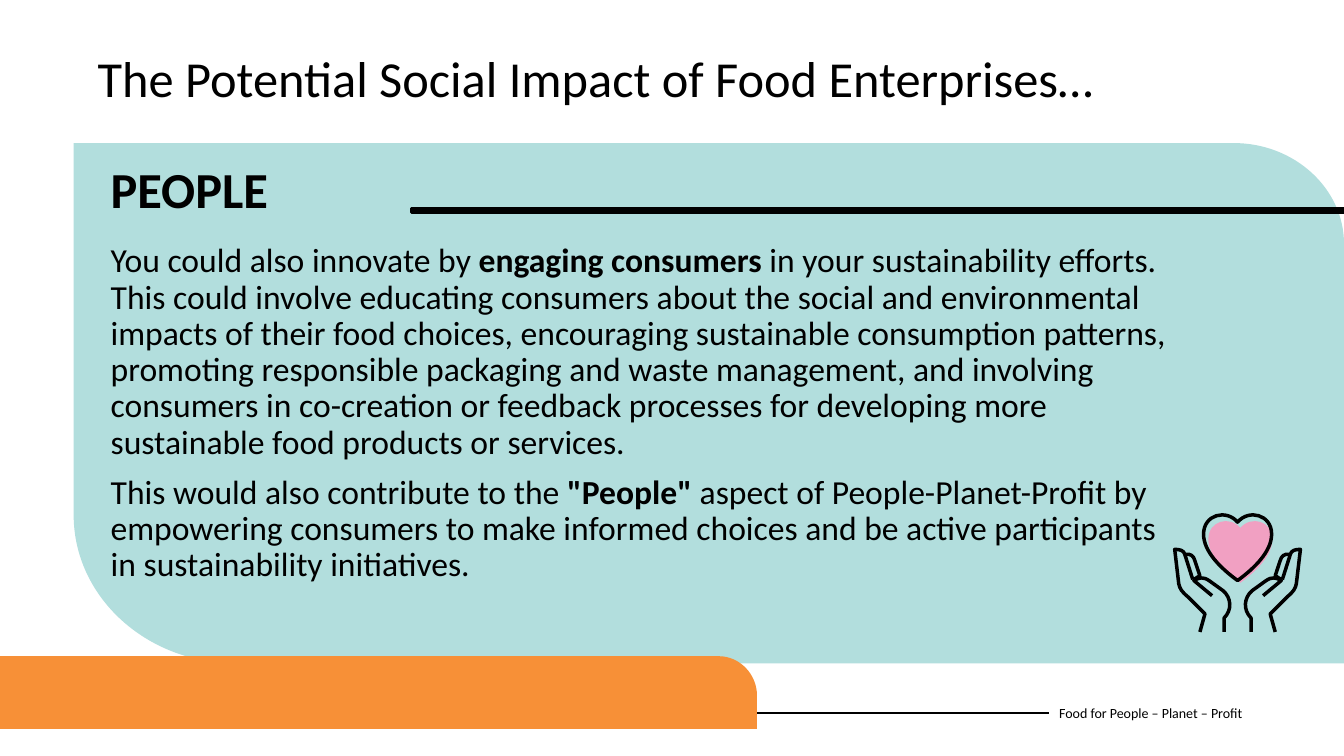
from dataclasses import dataclass

from lxml import etree
from pptx import Presentation
from pptx.dml.color import RGBColor
from pptx.enum.shapes import MSO_CONNECTOR, MSO_SHAPE
from pptx.enum.text import MSO_ANCHOR, MSO_AUTO_SIZE, PP_ALIGN
from pptx.oxml.ns import qn
from pptx.util import Pt

STRAIGHT = MSO_CONNECTOR.STRAIGHT
RECTANGLE = MSO_SHAPE.RECTANGLE
TOP, MIDDLE = MSO_ANCHOR.TOP, MSO_ANCHOR.MIDDLE
LEFT = PP_ALIGN.LEFT
NO_AUTOFIT = MSO_AUTO_SIZE.NONE

FONT = "Calibri"
COLORS = {"ink": "000000", "panel": "B2DEDD", "banner": "F79037", "heart": "F1A0C2"}
TITLE_ONLY = 5
ICON_X, ICON_Y = 884, 366  # mirror axis and top of the icon

Point = tuple[float, float]


@dataclass(frozen=True)
class Outline:
    """Each step holds one point for a straight line, three for a curve."""
    start: Point
    steps: list[tuple[Point, ...]]
    closed: bool = False

    def moved(self, dx: float, dy: float, sx: float = 1, sy: float = 1) -> "Outline":
        def place(point: Point) -> Point:
            return dx + sx * point[0], dy + sy * point[1]

        steps = [tuple(place(p) for p in step) for step in self.steps]
        return Outline(place(self.start), steps, self.closed)


@dataclass(frozen=True)
class Run:
    text: str
    bold: bool = False


@dataclass(frozen=True)
class TextStyle:
    size: float
    line_spacing: float = 1.0
    space_before: float = 0
    anchor: MSO_ANCHOR = TOP


PANEL = Outline((52.6, 102.2), [
    ((881.3, 102.2),),
    ((924.5, 102.2), (960, 134.6), (960, 174.2)),
    ((960, 473.8),),
    ((168.5, 473.8),),
    ((104.4, 473.8), (52.6, 426.2), (52.6, 367.9)),
], True)
BANNER = Outline((0, 468.7), [
    ((513.4, 468.7),),
    ((528.5, 468.7), (540.7, 481.7), (540.7, 496.8)),
    ((540.7, 520.6),),
    ((0, 520.6),),
], True)

# Icon parts, measured from the mirror axis
HEART = Outline((0, 7), [
    ((8, -2.5), (24.3, 1.5), (24.3, 15.6)),
    ((24.3, 28), (12, 40), (0, 48.7)),
    ((-12, 40), (-24.3, 28), (-24.3, 15.6)),
    ((-24.3, 1.5), (-8, -2.5), (0, 7)),
], True)
HAND = [
    Outline((9.6, 85.4), [  # wrist and thumb
        ((9.6, 75.4),),
        ((3.8, 69.6), (4.5, 61), (10.3, 56)),
        ((20.4, 48.7),),
        ((24.7, 45.8), (27.6, 46.6), (31.2, 48.7)),
        ((18.2, 59.5),),
    ]),
    Outline((26.9, 85.4), [  # outer edge and little finger
        ((23.3, 72.5),),
        ((35.5, 60.3),),
        ((39.8, 56.7), (41.3, 54.5), (42, 51)),
        ((44.9, 26.4),),
        ((41.3, 26.4), (38.4, 27.1), (37.7, 30)),
        ((32, 48),),
    ]),
    Outline((37, 30), [  # inner finger
        ((33.4, 29.3), (31.2, 31.5), (30.5, 34.4)),
        ((26.9, 45.2),),
        ((31.2, 48),),
    ]),
]

TITLE = [[Run("The Potential Social Impact of Food Enterprises…")]]
HEADING = [[Run("PEOPLE", True)]]
FOOTER = [[Run("Food for People – Planet – Profit")]]
BODY = [
    [
        Run("You could also innovate by "),
        Run("engaging consumers ", True),
        Run("in your sustainability efforts. This could involve educating consumers "
            "about the social and environmental impacts of their food choices, "
            "encouraging sustainable consumption patterns, promoting responsible "
            "packaging and waste management, and involving consumers in co-creation "
            "or feedback processes for developing more sustainable food products or "
            "services."),
    ],
    [
        Run("This would also contribute to the "),
        Run('"People" ', True),
        Run("aspect of People-Planet-Profit by empowering consumers to make informed "
            "choices and be active participants in sustainability initiatives."),
    ],
]


def color(name: str) -> RGBColor:
    return RGBColor.from_string(COLORS[name])


def paint(shape, fill: str | None, line_width: float = 0) -> None:
    shape.shadow.inherit = False
    if fill:
        shape.fill.solid()
        shape.fill.fore_color.rgb = color(fill)
    else:
        shape.fill.background()
    if line_width:
        shape.line.color.rgb = color("ink")
        shape.line.width = Pt(line_width)
    else:
        shape.line.fill.background()


def draw_outline(shapes, outline: Outline, fill: str | None, line_width: float = 0) -> None:
    builder = shapes.build_freeform(*map(Pt, outline.start))
    points = [(Pt(x), Pt(y)) for step in outline.steps for x, y in step]
    builder.add_line_segments(points, close=outline.closed)
    shape = builder.convert_to_shape()
    # Turn every three-point step into one curve
    segments = iter(list(shape._element.iter(qn("a:lnTo"))))
    for step in outline.steps:
        parts = [next(segments) for _ in step]
        if len(parts) == 3:
            curve = etree.Element(qn("a:cubicBezTo"))
            parts[0].addprevious(curve)
            for part in parts:
                curve.append(part[0])
                part.getparent().remove(part)
    paint(shape, fill, line_width)


def write(shape, box: tuple[float, float, float, float],
          paragraphs: list[list[Run]], style: TextStyle) -> None:
    shape.left, shape.top, shape.width, shape.height = map(Pt, box)
    frame = shape.text_frame
    frame.word_wrap = True
    frame.auto_size = NO_AUTOFIT
    frame.vertical_anchor = style.anchor
    for index, runs in enumerate(paragraphs):
        paragraph = frame.add_paragraph() if index else frame.paragraphs[0]
        paragraph.alignment = LEFT
        paragraph.line_spacing = style.line_spacing
        paragraph.space_before = Pt(style.space_before)
        for item in runs:
            run = paragraph.add_run()
            run.text = item.text
            run.font.name = FONT
            run.font.size = Pt(style.size)
            run.font.bold = item.bold
            run.font.color.rgb = color("ink")


def main() -> None:
    deck = Presentation()
    deck.slide_width, deck.slide_height = Pt(960), Pt(540)
    slide = deck.slides.add_slide(deck.slide_layouts[TITLE_ONLY])
    shapes = slide.shapes

    # Footer line, panel, banner and heading rule
    footer_line = shapes.add_connector(STRAIGHT, Pt(0), Pt(509), Pt(749.5), Pt(509))
    footer_line.line.color.rgb = color("ink")
    footer_line.line.width = Pt(1.5)
    etree.SubElement(footer_line._element.spPr, qn("a:effectLst"))
    draw_outline(shapes, PANEL, "panel")
    draw_outline(shapes, BANNER, "banner")
    heading_rule = shapes.add_shape(RECTANGLE, Pt(293.8), Pt(149), Pt(666.2), Pt(2.9))
    paint(heading_rule, "ink", 1.93)

    # Texts
    write(shapes.title, (62.6, 35.3, 834.5, 63.4), TITLE, TextStyle(36, 0.9, 10))
    for box, paragraphs, style in [
        ((72, 109.4, 192.2, 51.1), HEADING, TextStyle(36)),
        ((72, 170.6, 776.9, 270.7), BODY, TextStyle(24, 0.9, 10)),
        ((749.5, 494.6, 196.6, 28.8), FOOTER, TextStyle(10, anchor=MIDDLE)),
    ]:
        write(shapes.add_textbox(0, 0, 0, 0), box, paragraphs, style)

    # Heart held by two mirrored hands
    icon = shapes.add_group_shape().shapes
    draw_outline(icon, HEART.moved(ICON_X + 2, ICON_Y + 4.5, 0.94, 0.94), "heart")
    draw_outline(icon, HEART.moved(ICON_X, ICON_Y), None, 2.5)
    for side in (-1, 1):
        for stroke in HAND:
            draw_outline(icon, stroke.moved(ICON_X, ICON_Y, side), None, 2.5)

    deck.save("out.pptx")


if __name__ == "__main__":
    main()
